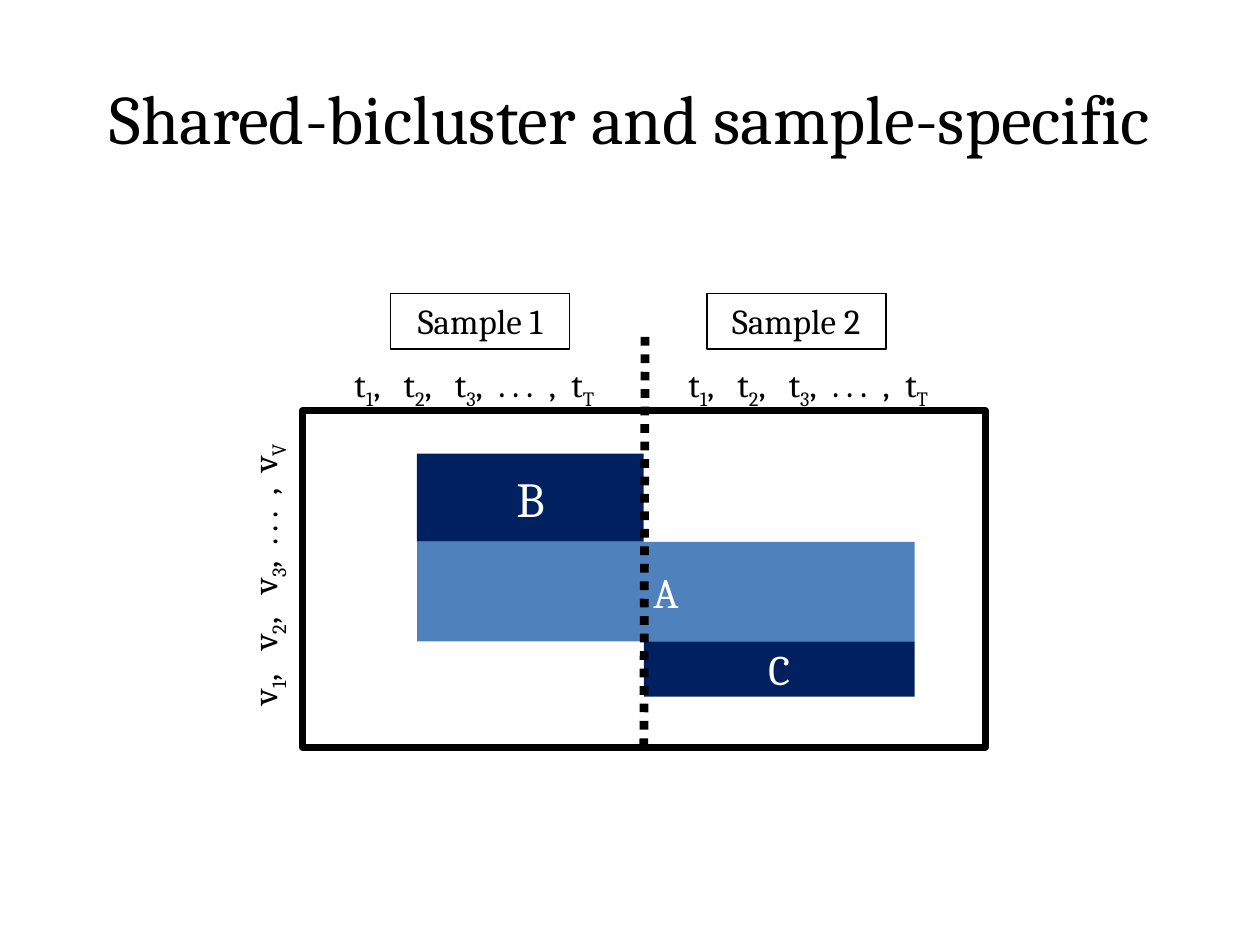
import pptx
import pptx.util
import pptx.dml.color
import pptx.enum.dml
import pptx.enum.shapes
import pptx.enum.text
from pptx.oxml.ns import qn
from lxml import etree

Pt, Inches = pptx.util.Pt, pptx.util.Inches
MSO_ANCHOR = pptx.enum.text.MSO_ANCHOR
RECT = pptx.enum.shapes.MSO_SHAPE.RECTANGLE

# Content
TITLE = "Shared-bicluster and sample-specific"
SAMPLES = [("Sample 1", 3.1, 2.4), ("Sample 2", 5.61, 5.05)]  # name, box left, axis left
INDICES = ["1", "2", "3", "T"]
COLS = [3.31, 5.11, 7.26]        # bicluster column edges
ROWS = [3.6, 4.3, 5.09, 5.53]    # bicluster row edges
CLUSTERS = [                     # name, first and last column edge, row, fill, size
    ("A", 0, 2, 1, "shared", "cluster"),
    ("C", 1, 2, 2, "specific", "cluster"),
    ("B", 0, 1, 0, "specific", "large"),
]
MATRIX = (2.4, 3.26, 5.42, 2.67)
AXIS_W, LABEL_H = 2.73, 0.44

THEME = {
    "font": "Cambria",
    "color": {"ink": "000000", "paper": "FFFFFF", "shared": "4F81BD", "specific": "002060"},
    "size": {"title": 39.6, "large": 28, "cluster": 24, "label": 20},
}


def rgb(name):
    return pptx.dml.color.RGBColor.from_string(THEME["color"][name])


def add_run(p, text, size="label", color="ink", **attrs):
    r = p.add_run()
    r.text = text
    for key, value in {"name": THEME["font"], "size": Pt(THEME["size"][size])}.items():
        setattr(r.font, key, value)
    r.font.color.rgb = rgb(color)
    for key, value in attrs.items():
        r.font._element.set(key, str(value))


def first_paragraph(sp, anchor=MSO_ANCHOR.TOP, wrap=True):
    for key, value in {"word_wrap": wrap, "vertical_anchor": anchor}.items():
        setattr(sp.text_frame, key, value)
    p = sp.text_frame.paragraphs[0]
    p.alignment = pptx.enum.text.PP_ALIGN.CENTER
    return p


def add_rect(s, box, fill=None, line=None):
    sp = s.shapes.add_shape(RECT, *map(Inches, box))
    sp.shadow.inherit = False
    if fill:
        sp.fill.solid()
        sp.fill.fore_color.rgb = rgb(fill)
    else:
        sp.fill.background()
    if line:
        sp.line.color.rgb = rgb("ink")
        sp.line.width = Pt(line)
    else:
        sp.line.fill.background()
    return sp


def add_axis(s, left, top, letter, last, rotation=0):
    """Series such as t1, t2, t3, . . . , tT; gaps are widened single spaces."""
    sp = s.shapes.add_textbox(*map(Inches, (left, top, AXIS_W, LABEL_H)))
    sp.rotation = rotation
    p = first_paragraph(sp)
    for i, index in enumerate(INDICES[:-1] + [last]):
        if i == len(INDICES) - 1:
            for part in (",", ". . .", ","):
                add_run(p, part)
                add_run(p, " ", spc=440)
        elif i:
            add_run(p, ",")
            add_run(p, " ", spc=880)
        add_run(p, letter)
        add_run(p, index, baseline=-25000)


def main():
    prs = pptx.Presentation()
    prs.slide_width, prs.slide_height = Inches(10), Inches(7.5)
    s = prs.slides.add_slide(prs.slide_layouts[5])

    # Title
    title = s.shapes.title
    for key, value in zip(("left", "top", "width", "height"), (0.5, 0.3, 9, 1.25)):
        setattr(title, key, Inches(value))
    add_run(first_paragraph(title, MSO_ANCHOR.MIDDLE), TITLE, "title")

    # Biclusters
    for name, c0, c1, row, fill, size in CLUSTERS:
        box = (COLS[c0], ROWS[row], COLS[c1] - COLS[c0], ROWS[row + 1] - ROWS[row])
        sp = add_rect(s, box, fill)
        add_run(first_paragraph(sp, MSO_ANCHOR.MIDDLE), name, size, "paper")

    # Matrix frame and the divider between samples
    matrix = add_rect(s, MATRIX, line=4)
    divider = s.shapes.add_connector(
        pptx.enum.shapes.MSO_CONNECTOR.STRAIGHT, *map(Inches, (5.11, 5.93, 5.12, 2.67)))
    divider.begin_connect(matrix, 2)
    divider.line.color.rgb = rgb("ink")
    divider.line.width = Pt(5)
    divider.line.dash_style = pptx.enum.dml.MSO_LINE.ROUND_DOT
    etree.SubElement(divider._element.spPr, qn("a:effectLst"))

    # Sample names and axis labels
    for name, box_left, axis_left in SAMPLES:
        sp = add_rect(s, (box_left, 2.33, 1.42, LABEL_H), line=1)
        add_run(first_paragraph(sp), name)
        add_axis(s, axis_left, 2.83, "t", INDICES[-1])
    add_axis(s, 0.73, 4.34, "v", "V", rotation=270)

    prs.save("out.pptx")


if __name__ == "__main__":
    main()
